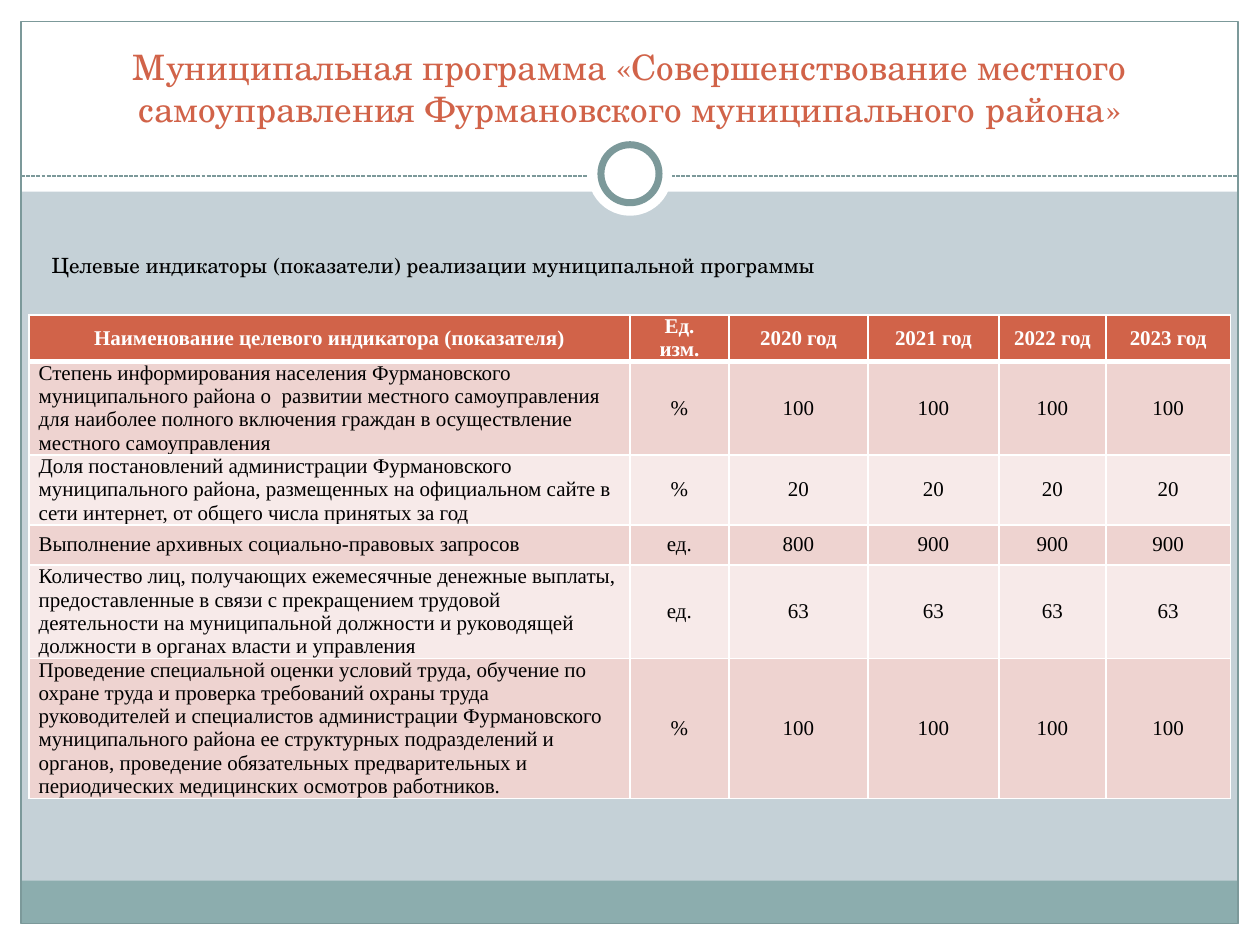
import pptx
import pptx.dml.color
import pptx.enum.dml
import pptx.enum.shapes
import pptx.enum.text
import pptx.oxml
import pptx.oxml.ns
import pptx.util

Pt = pptx.util.Pt
RGBColor = pptx.dml.color.RGBColor
ALIGN = pptx.enum.text.PP_ALIGN
ANCHOR = pptx.enum.text.MSO_ANCHOR
SHAPE = pptx.enum.shapes.MSO_SHAPE

WHITE = RGBColor(0xFF, 0xFF, 0xFF)
BLACK = RGBColor(0x00, 0x00, 0x00)
BACKGROUND = RGBColor(0xC5, 0xD1, 0xD7)
FOOTER = RGBColor(0x8C, 0xAD, 0xAE)
FRAME = RGBColor(0x7C, 0x99, 0x9A)
ACCENT = RGBColor(0xD1, 0x63, 0x49)
BANDS = [RGBColor(0xEE, 0xD3, 0xD0), RGBColor(0xF7, 0xEA, 0xE9)]

HEADING_FONT = "TeX Gyre Schola"
TABLE_FONT = "Times New Roman"

TITLE = "Муниципальная программа «Совершенствование местного самоуправления Фурмановского муниципального района»"
SUBTITLE = "Целевые индикаторы (показатели) реализации муниципальной программы"
LINE_HEIGHT = 13.3
COLUMN_WIDTHS = [343.3, 56.6, 79.4, 74.9, 61.1, 71.2]
ROW_HEIGHTS = [26.6, 53.3, 40, 23, 53.3, 80]
HEADER = ["Наименование целевого индикатора (показателя)", "Ед.\nизм."] + [
    f"{year} год" for year in range(2020, 2024)
]
INDICATORS = [
    ["Степень информирования населения Фурмановского муниципального района о  развитии местного самоуправления для наиболее полного включения граждан в осуществление местного самоуправления",
     "%", "100", "100", "100", "100"],
    ["Доля постановлений администрации Фурмановского муниципального района, размещенных на официальном сайте в сети интернет, от общего числа принятых за год",
     "%", "20", "20", "20", "20"],
    ["Выполнение архивных социально-правовых запросов",
     "ед.", "800", "900", "900", "900"],
    ["Количество лиц, получающих ежемесячные денежные выплаты, предоставленные в связи с прекращением трудовой деятельности на муниципальной должности и руководящей должности в органах власти и управления",
     "ед.", "63", "63", "63", "63"],
    ["Проведение специальной оценки условий труда, обучение по охране труда и проверка требований охраны труда руководителей и специалистов администрации Фурмановского муниципального района ее структурных подразделений и органов, проведение обязательных предварительных и периодических медицинских осмотров работников.",
     "%", "100", "100", "100", "100"],
]


def add_box(slide, kind, left, top, width, height, fill=None, line=None, line_width=0.75):
    shape = slide.shapes.add_shape(kind, Pt(left), Pt(top), Pt(width), Pt(height))
    shape.shadow.inherit = False
    if fill is None:
        shape.fill.background()
    else:
        shape.fill.solid()
        shape.fill.fore_color.rgb = fill
    if line is None:
        shape.line.fill.background()
    else:
        shape.line.color.rgb = line
        shape.line.width = Pt(line_width)


def add_dashed_line(slide, left, right, y):
    connector = slide.shapes.add_connector(
        pptx.enum.shapes.MSO_CONNECTOR.STRAIGHT, Pt(left), Pt(y), Pt(right), Pt(y)
    )
    connector.line.color.rgb = FRAME
    connector.line.width = Pt(0.75)
    connector.line.dash_style = pptx.enum.dml.MSO_LINE.SQUARE_DOT
    properties = connector.element.find(pptx.oxml.ns.qn("p:spPr"))
    properties.append(
        pptx.oxml.parse_xml(f"<a:effectLst {pptx.oxml.ns.nsdecls('a')}/>")
    )


def add_run(paragraph, text, font, size, color, bold=False):
    run = paragraph.add_run()
    run.text = text
    run.font.name = font
    run.font.size = Pt(size)
    run.font.color.rgb = color
    run.font.bold = bold


def add_decoration(slide):
    add_box(slide, SHAPE.RECTANGLE, 0, 528, 720, 12, WHITE)
    add_box(slide, SHAPE.RECTANGLE, 0, 0, 720, 109.5, WHITE)
    for left in (0, 708):
        add_box(slide, SHAPE.RECTANGLE, left, 0, 12, 540, WHITE)
    add_box(slide, SHAPE.RECTANGLE, 12, 503.2, 695.5, 24.5, FOOTER)
    add_box(slide, SHAPE.RECTANGLE, 12, 12.2, 695.5, 515.5, line=FRAME)
    add_dashed_line(slide, 12, 707.5, 100.6)
    add_box(slide, SHAPE.OVAL, 336, 75.3, 48, 48, WHITE)
    add_box(slide, SHAPE.OVAL, 343.4, 82.7, 33.2, 33.2, WHITE, FRAME, 4)


def format_title(slide):
    title = slide.shapes.title
    title.element.getparent().append(title.element)
    title.left, title.top, title.width, title.height = Pt(24), Pt(17.5), Pt(672), Pt(60)
    frame = title.text_frame
    frame.word_wrap = True
    frame.auto_size = pptx.enum.text.MSO_AUTO_SIZE.NONE
    frame.vertical_anchor = ANCHOR.BOTTOM
    paragraph = frame.paragraphs[0]
    paragraph.alignment = ALIGN.CENTER
    add_run(paragraph, TITLE, HEADING_FONT, 20, ACCENT)


def add_subtitle(slide):
    text_box = slide.shapes.add_textbox(Pt(22.5), Pt(140.5), Pt(669.5), Pt(48))
    text_box.text_frame.word_wrap = True
    paragraph = text_box.text_frame.paragraphs[0]
    paragraph.space_before = Pt(2.4)
    add_run(paragraph, SUBTITLE, HEADING_FONT, 12, BLACK)


def add_borders(cell, bottom_width):
    properties = cell._tc.get_or_add_tcPr()
    for side, width in (("L", 1), ("R", 1), ("T", 1), ("B", bottom_width)):
        properties.append(pptx.oxml.parse_xml(
            f'<a:ln{side} {pptx.oxml.ns.nsdecls("a")} w="{Pt(width)}">'
            f'<a:solidFill><a:srgbClr val="{WHITE}"/></a:solidFill></a:ln{side}>'
        ))


def fill_cell(cell, text, alignment, color, fill, is_header):
    add_borders(cell, 3 if is_header else 1)
    cell.fill.solid()
    cell.fill.fore_color.rgb = fill
    cell.vertical_anchor = ANCHOR.MIDDLE
    cell.margin_left = cell.margin_right = Pt(5.4)
    cell.margin_top = cell.margin_bottom = Pt(0)
    frame = cell.text_frame
    for index, line in enumerate(text.split("\n")):
        paragraph = frame.add_paragraph() if index else frame.paragraphs[0]
        paragraph.alignment = alignment
        paragraph.line_spacing = Pt(LINE_HEIGHT)
        add_run(paragraph, line, TABLE_FONT, 12, color, is_header)


def add_indicator_table(slide):
    rows = [HEADER] + INDICATORS
    table = slide.shapes.add_table(
        len(rows), len(HEADER), Pt(16.7), Pt(180),
        Pt(sum(COLUMN_WIDTHS)), Pt(sum(ROW_HEIGHTS)),
    ).table
    table.horz_banding = False
    for column, width in zip(table.columns, COLUMN_WIDTHS):
        column.width = Pt(width)
    for row_index, values in enumerate(rows):
        table.rows[row_index].height = Pt(ROW_HEIGHTS[row_index])
        is_header = row_index == 0
        fill = ACCENT if is_header else BANDS[(row_index - 1) % 2]
        color = WHITE if is_header else BLACK
        for column_index, text in enumerate(values):
            centered = is_header or column_index > 0
            alignment = ALIGN.CENTER if centered else ALIGN.LEFT
            fill_cell(table.cell(row_index, column_index), text, alignment, color, fill, is_header)


def main():
    presentation = pptx.Presentation()
    presentation.slide_width = Pt(720)
    presentation.slide_height = Pt(540)
    slide = presentation.slides.add_slide(presentation.slide_layouts[5])
    slide.background.fill.solid()
    slide.background.fill.fore_color.rgb = BACKGROUND
    add_decoration(slide)
    format_title(slide)
    add_subtitle(slide)
    add_indicator_table(slide)
    presentation.save("out.pptx")


if __name__ == "__main__":
    main()
